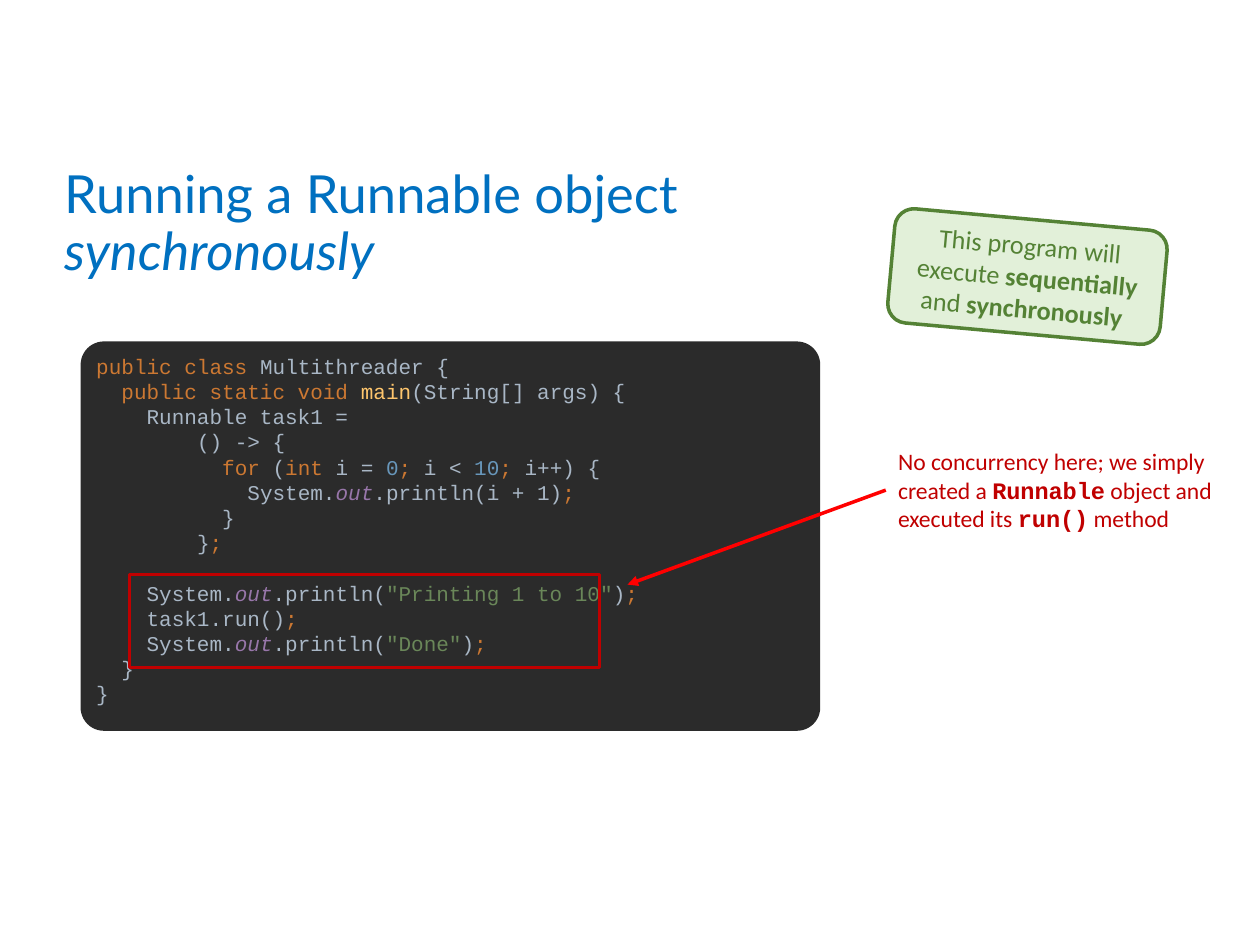
"""Build the slide on running a Runnable object synchronously."""
from dataclasses import dataclass

import lxml.etree
import pptx
import pptx.dml.color
import pptx.enum.shapes
import pptx.enum.text
import pptx.oxml.ns
import pptx.util
from pptx.util import Inches

BLUE, RED, GREEN = "0070C0", "C00000", "548235"
KEYWORD, PLAIN, METHOD = "CC7832", "A9B7C6", "FFC66D"
NUMBER, FIELD, STRING = "6897BB", "9876AA", "6A8759"
MONO, SANS = "Courier New", "Calibri"
CODE_SIZE, CODE_PITCH, CHARACTER_WIDTH = 12, 14.4, 7.2


@dataclass(frozen=True)
class Span:
    text: str
    color: str
    font: str = MONO
    bold: bool = False
    italic: bool = False


@dataclass(frozen=True)
class CodeLine:
    indent: int
    spans: tuple
    gap_before: bool = False


@dataclass(frozen=True)
class Box:
    left: float
    top: float
    width: float
    height: float

    def lengths(self) -> tuple:
        return tuple(Inches(value) for value in (self.left, self.top, self.width, self.height))


def rgb(color: str) -> pptx.dml.color.RGBColor:
    return pptx.dml.color.RGBColor.from_string(color)


def print_call(argument: str) -> tuple:
    return (
        Span("System.", PLAIN), Span("out", FIELD, italic=True), Span(".println(", PLAIN),
        Span(argument, STRING), Span(")", PLAIN), Span(";", KEYWORD),
    )


CODE = (
    CodeLine(0, (Span("public class ", KEYWORD), Span("Multithreader {", PLAIN))),
    CodeLine(2, (Span("public static void ", KEYWORD), Span("main", METHOD),
                 Span("(String[] args) {", PLAIN))),
    CodeLine(4, (Span("Runnable task1 =", PLAIN),)),
    CodeLine(8, (Span("() -> {", PLAIN),)),
    CodeLine(10, (Span("for ", KEYWORD), Span("(", PLAIN), Span("int ", KEYWORD),
                  Span("i = ", PLAIN), Span("0", NUMBER), Span("; ", KEYWORD),
                  Span("i < ", PLAIN), Span("10", NUMBER), Span("; ", KEYWORD),
                  Span("i++) {", PLAIN))),
    CodeLine(12, (Span("System.", PLAIN), Span("out", FIELD, italic=True),
                  Span(".println(i + 1)", PLAIN), Span(";", KEYWORD))),
    CodeLine(10, (Span("}", PLAIN),)),
    CodeLine(8, (Span("}", PLAIN), Span(";", KEYWORD))),
    CodeLine(4, print_call('"Printing 1 to 10"'), gap_before=True),
    CodeLine(4, (Span("task1.run()", PLAIN), Span(";", KEYWORD))),
    CodeLine(4, print_call('"Done"')),
    CodeLine(2, (Span("}", PLAIN),)),
    CodeLine(0, (Span("}", PLAIN),)),
)
NOTE = (
    Span("No concurrency here; we simply created a ", RED, SANS),
    Span("Runnable", RED, bold=True),
    Span(" object and executed its ", RED, SANS),
    Span("run()", RED, bold=True),
    Span(" method", RED, SANS),
)
BADGE = (
    Span("This program will execute ", GREEN, SANS),
    Span("sequentially ", GREEN, SANS, bold=True),
    Span("and", GREEN, SANS),
    Span(" synchronously ", GREEN, SANS, bold=True),
)


def format_run(run, span: Span, size: float) -> None:
    run.font.name, run.font.size = span.font, pptx.util.Pt(size)
    run.font.bold, run.font.italic = span.bold, span.italic
    run.font.color.rgb = rgb(span.color)


def write_spans(paragraph, spans: tuple, size: float) -> None:
    for span in spans:
        run = paragraph.add_run()
        run.text = span.text
        format_run(run, span, size)


def add_box(slide, kind, box: Box, fill: str = "", line: str = ""):
    shape = slide.shapes.add_shape(kind, *box.lengths())
    shape.shadow.inherit = False
    if fill:
        shape.fill.solid()
        shape.fill.fore_color.rgb = rgb(fill)
    else:
        shape.fill.background()
    if line:
        shape.line.color.rgb = rgb(line)
        shape.line.width = pptx.util.Pt(2)
    else:
        shape.line.fill.background()
    return shape


def set_title(slide) -> None:
    title = slide.shapes.title
    title.left, title.top, title.width, title.height = Box(0.41, 1.24, 6.32, 1.09).lengths()
    frame = title.text_frame
    frame.text = "Running a Runnable object\nsynchronously"
    frame.auto_size = pptx.enum.text.MSO_AUTO_SIZE.NONE
    frame.vertical_anchor = pptx.enum.text.MSO_ANCHOR.MIDDLE
    for paragraph, italic in zip(frame.paragraphs, (False, True)):
        paragraph.alignment = pptx.enum.text.PP_ALIGN.LEFT
        paragraph.line_spacing = 0.9
        run = paragraph.runs[0]
        format_run(run, Span(run.text, BLUE, "Lato", italic=italic), 30)


def add_code(slide, lines: tuple) -> None:
    panel = add_box(slide, pptx.enum.shapes.MSO_SHAPE.ROUNDED_RECTANGLE,
                    Box(0.64, 2.71, 5.87, 3.09), fill="2B2B2B")
    panel.adjustments[0] = 0.06
    frame = panel.text_frame
    frame.margin_left = frame.margin_right = Inches(0.07)
    frame.margin_top = frame.margin_bottom = Inches(0.04)
    frame.vertical_anchor = pptx.enum.text.MSO_ANCHOR.TOP
    for index, line in enumerate(lines):
        paragraph = frame.add_paragraph() if index else frame.paragraphs[0]
        paragraph.alignment = pptx.enum.text.PP_ALIGN.LEFT
        paragraph.line_spacing = pptx.util.Pt(CODE_PITCH)
        paragraph.space_before = pptx.util.Pt(CODE_PITCH if line.gap_before else 0)
        properties = paragraph._p.get_or_add_pPr()
        properties.set("marL", str(int(pptx.util.Pt(line.indent * CHARACTER_WIDTH))))
        properties.set("indent", "0")
        write_spans(paragraph, line.spans, CODE_SIZE)


def add_note(slide):
    note = slide.shapes.add_textbox(*Box(7.03, 3.5, 2.97, 0.78).lengths())
    note.text_frame.word_wrap = True
    note.text_frame.auto_size = pptx.enum.text.MSO_AUTO_SIZE.SHAPE_TO_FIT_TEXT
    write_spans(note.text_frame.paragraphs[0], NOTE, 13.5)
    return note


def add_arrow(slide, source) -> None:
    arrow = slide.shapes.add_connector(pptx.enum.shapes.MSO_CONNECTOR.STRAIGHT,
                                       Inches(7.03), Inches(3.89), Inches(4.98), Inches(4.64))
    arrow.begin_connect(source, 1)
    arrow.line.color.rgb = rgb("FF0000")
    arrow.line.width = pptx.util.Pt(2)
    qualify = pptx.oxml.ns.qn
    lxml.etree.SubElement(arrow.get_or_add_ln(), qualify("a:tailEnd"), type="triangle")
    lxml.etree.SubElement(arrow._element.spPr, qualify("a:effectLst"))


def add_badge(slide) -> None:
    badge = add_box(slide, pptx.enum.shapes.MSO_SHAPE.ROUNDED_RECTANGLE,
                    Box(7.07, 1.74, 2.17, 0.91), fill="E2F0D9", line=GREEN)
    badge.rotation = 5.2
    badge.text_frame.vertical_anchor = pptx.enum.text.MSO_ANCHOR.MIDDLE
    paragraph = badge.text_frame.paragraphs[0]
    paragraph.alignment = pptx.enum.text.PP_ALIGN.CENTER
    write_spans(paragraph, BADGE, 15)


def main() -> None:
    presentation = pptx.Presentation()
    presentation.slide_width, presentation.slide_height = Inches(10), Inches(7.5)
    slide = presentation.slides.add_slide(presentation.slide_layouts[5])
    set_title(slide)
    add_code(slide, CODE)
    add_arrow(slide, add_note(slide))
    add_box(slide, pptx.enum.shapes.MSO_SHAPE.RECTANGLE, Box(1.03, 4.56, 3.73, 0.74), line=RED)
    add_badge(slide)
    presentation.save("out.pptx")


if __name__ == "__main__":
    main()
